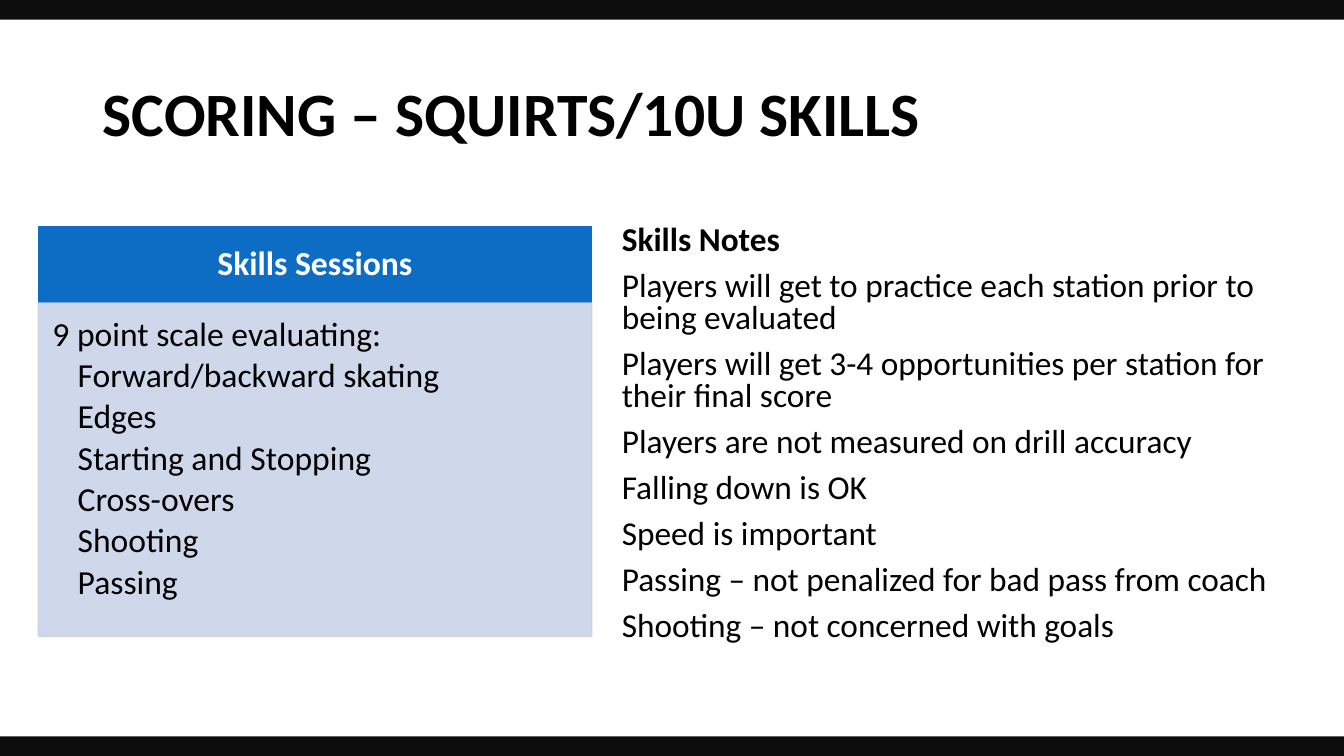
import pptx
import pptx.dml.color
import pptx.enum.shapes
import pptx.enum.text
import pptx.oxml.ns
import pptx.util
from lxml import etree

RGBColor = pptx.dml.color.RGBColor
BLACK = RGBColor(0x00, 0x00, 0x00)
WHITE = RGBColor(0xFF, 0xFF, 0xFF)
BLUE = RGBColor(0x0D, 0x6D, 0xC5)
PALE_BLUE = RGBColor(0xCA, 0xD4, 0xE8)
NEAR_BLACK = RGBColor(0x0D, 0x0D, 0x0D)

LEFT = pptx.enum.text.PP_ALIGN.LEFT
CENTER = pptx.enum.text.PP_ALIGN.CENTER
TOP = pptx.enum.text.MSO_ANCHOR.TOP
MIDDLE = pptx.enum.text.MSO_ANCHOR.MIDDLE

SKILLS = ["Forward/backward skating", "Edges", "Starting and Stopping",
          "Cross-overs", "Shooting", "Passing"]
NOTES = ["Players will get to practice each station prior to being evaluated",
         "Players will get 3-4 opportunities per station for their final score",
         "Players are not measured on drill accuracy",
         "Falling down is OK",
         "Speed is important",
         "Passing – not penalized for bad pass from coach",
         "Shooting – not concerned with goals"]


class SlideBuilder:
    """Places elements by percent of the slide's width and height."""

    font_name = "Calibri"

    def __init__(self, presentation):
        self.width = presentation.slide_width
        self.height = presentation.slide_height
        self.slide = presentation.slides.add_slide(presentation.slide_layouts[5])

    def place(self, left, top, width, height):
        return (round(self.width * left / 100), round(self.height * top / 100),
                round(self.width * width / 100), round(self.height * height / 100))

    def frame(self, shape, anchor, insets=(0.1, 0.05, 0.1, 0.05)):
        frame = shape.text_frame
        frame.word_wrap = True
        frame.auto_size = pptx.enum.text.MSO_AUTO_SIZE.NONE
        frame.vertical_anchor = anchor
        (frame.margin_left, frame.margin_top,
         frame.margin_right, frame.margin_bottom) = map(pptx.util.Inches, insets)
        return frame

    def add_line(self, frame, text, size, color=BLACK, bold=False, align=LEFT,
                 spacing=0.9, before=0, indent=0):
        first = frame.paragraphs[0]
        paragraph = frame.add_paragraph() if first.runs else first
        paragraph.alignment = align
        paragraph.line_spacing = spacing
        paragraph.space_before = pptx.util.Pt(before)
        if indent:
            properties = paragraph._p.get_or_add_pPr()
            properties.set("marL", str(pptx.util.Inches(indent)))
            properties.set("indent", "0")
        run = paragraph.add_run()
        run.text = text
        run.font.name = self.font_name
        run.font.size = pptx.util.Pt(size)
        run.font.bold = bold
        run.font.color.rgb = color

    def title(self, text, box):
        shape = self.slide.shapes.title
        shape.left, shape.top, shape.width, shape.height = self.place(*box)
        self.add_line(self.frame(shape, MIDDLE), text, 44, bold=True)

    def rectangle(self, box, color, outlined=False, opacity=100):
        shape = self.slide.shapes.add_shape(
            pptx.enum.shapes.MSO_SHAPE.RECTANGLE, *self.place(*box))
        shape.shadow.inherit = False
        shape.fill.solid()
        shape.fill.fore_color.rgb = color
        if outlined:
            shape.line.color.rgb = color
            shape.line.width = pptx.util.Pt(1)
        else:
            shape.line.fill.background()
        if opacity < 100:
            for color_element in shape._element.spPr.iter(pptx.oxml.ns.qn("a:srgbClr")):
                alpha = etree.SubElement(color_element, pptx.oxml.ns.qn("a:alpha"))
                alpha.set("val", str(opacity * 1000))
        return shape

    def text_box(self, box):
        shape = self.slide.shapes.add_textbox(*self.place(*box))
        return self.frame(shape, TOP)


def main():
    presentation = pptx.Presentation()
    presentation.slide_width = pptx.util.Inches(13.33)
    presentation.slide_height = pptx.util.Inches(7.5)
    builder = SlideBuilder(presentation)

    builder.title("SCORING – SQUIRTS/10U SKILLS", (6.9, 5.73, 86.26, 19.33))

    # Skills panel: header above body
    panel_left, panel_width = 2.85, 41.18
    header = builder.rectangle((panel_left, 30, panel_width, 10.1), BLUE, outlined=True)
    header_frame = builder.frame(header, MIDDLE, (0.19, 0.11, 0.19, 0.11))
    builder.add_line(header_frame, "Skills Sessions", 24, WHITE, bold=True, align=CENTER)

    body = builder.rectangle((panel_left, 40.1, panel_width, 44.1), PALE_BLUE,
                             outlined=True, opacity=89)
    body_frame = builder.frame(body, TOP, (0.14, 0.14, 0.19, 0.21))
    builder.add_line(body_frame, "9 point scale evaluating:", 24)
    for skill in SKILLS:
        builder.add_line(body_frame, skill, 24, before=3.6, indent=0.25)

    # Notes column
    notes_frame = builder.text_box((45.53, 29.2, 51.68, 57.47))
    builder.add_line(notes_frame, "Skills Notes", 23.8, bold=True, spacing=0.8)
    for note in NOTES:
        builder.add_line(notes_frame, note, 23.8, spacing=0.8, before=10)

    # Bars along the top and bottom edges
    bar_height = 2.6
    for bar_top in (0, 100 - bar_height):
        builder.rectangle((0, bar_top, 100, bar_height), NEAR_BLACK)

    presentation.save("out.pptx")


if __name__ == "__main__":
    main()
